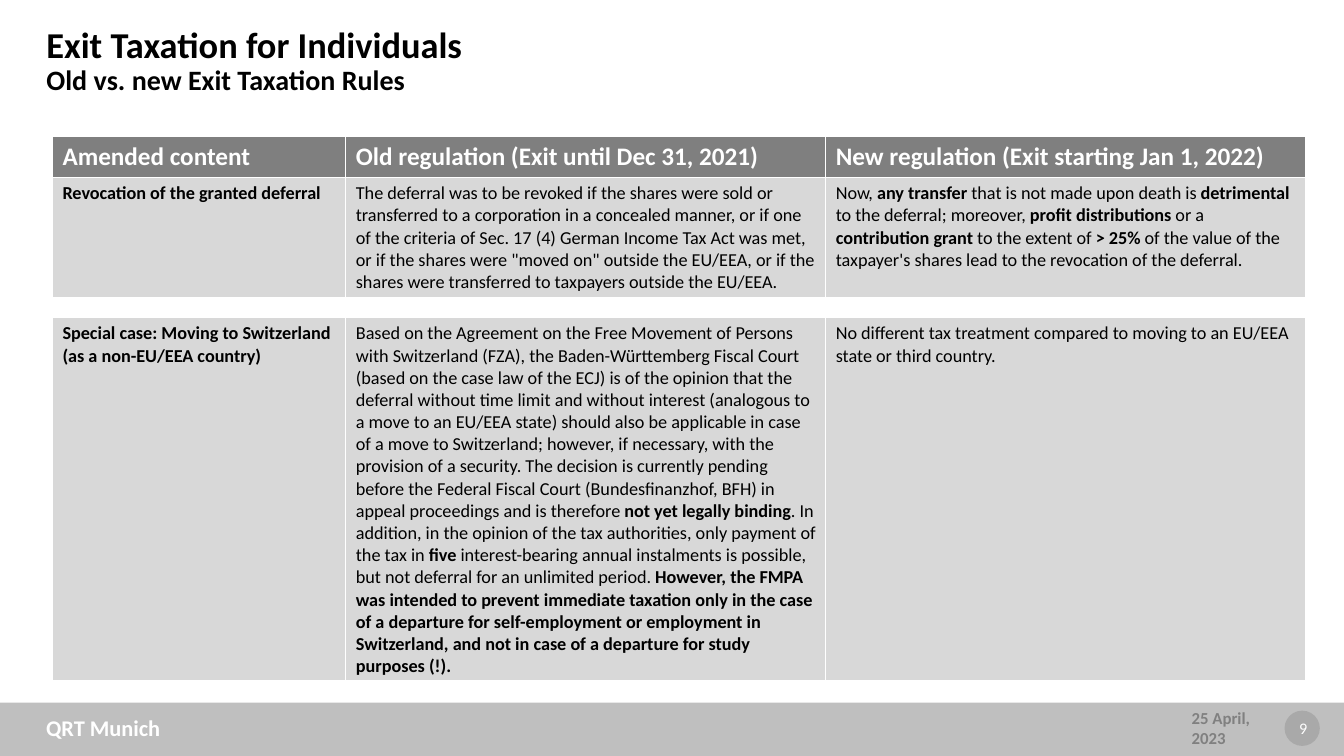
from lxml import etree
from pptx import Presentation
from pptx.dml.color import RGBColor
from pptx.enum.shapes import MSO_SHAPE as Shape
from pptx.enum.text import MSO_ANCHOR as Anchor, MSO_AUTO_SIZE as AutoSize, PP_ALIGN as Align
from pptx.oxml.ns import qn
from pptx.util import Inches, Pt

COLUMN_WIDTHS = (2.91, 4.76, 4.76)
HEADER_HEIGHT = 0.41
GAP_HEIGHT = 0.2
HEADERS = (
    "Amended content",
    "Old regulation (Exit until Dec 31, 2021)",
    "New regulation (Exit starting Jan 1, 2022)",
)
REVOCATION = (
    "**Revocation of the granted deferral**",
    "The deferral was to be revoked if the shares were sold or transferred to a "
    "corporation in a concealed manner, or if one of the criteria of Sec. 17 (4) "
    "German Income Tax Act was met, or if the shares were \"moved on\" outside the "
    "EU/EEA, or if the shares were transferred to taxpayers outside the EU/EEA.",
    "Now, **any transfer **that is not made upon death is **detrimental** to the "
    "deferral; moreover, **profit distributions **or a **contribution grant **to the "
    "extent of **> 25% **of the value of the taxpayer's shares lead to the revocation "
    "of the deferral.",
)
COURT_OPINION = (
    "Based on the Agreement on the Free Movement of Persons with Switzerland (FZA), "
    "the Baden-Württemberg Fiscal Court (based on the case law of the ECJ) is of the "
    "opinion that the deferral without time limit and without interest (analogous to "
    "a move to an EU/EEA state) should also be applicable in case of a move to "
    "Switzerland; however, if necessary, with the provision of a security. The decision "
    "is currently pending before the Federal Fiscal Court (Bundesfinanzhof, BFH) in "
    "appeal proceedings and is therefore **not yet legally binding**."
)
AUTHORITY_OPINION = (
    "In addition, in the opinion of the tax authorities, only payment of the tax in "
    "**five** interest-bearing annual instalments is possible, but not deferral for an "
    "unlimited period. **However, the FMPA was intended to prevent immediate taxation "
    "only in the case of a departure for self-employment or employment in Switzerland, "
    "and not in case of a departure for study purposes (!).**"
)
SWITZERLAND = (
    "**Special case: Moving to Switzerland (as a non-EU/EEA country)**",
    " ".join((COURT_OPINION, AUTHORITY_OPINION)),
    "No different tax treatment compared to moving to an EU/EEA state or third country.",
)
CONTENT_ROWS = ((1, 1.19, REVOCATION), (3, 3.6, SWITZERLAND))


def color(value):
    return RGBColor.from_string(value)


def format_span(span, size, hue, bold):
    span.font.name = "Calibri"
    span.font.size = Pt(size)
    span.font.bold = bold
    span.font.color.rgb = color(hue)


def add_panel(page, kind, place, hue, opacity=None):
    panel = page.shapes.add_shape(kind, *map(Inches, place))
    panel.shadow.inherit = False
    panel.line.fill.background()
    panel.fill.solid()
    panel.fill.fore_color.rgb = color(hue)
    if opacity:
        tint = panel._element.spPr.find(".//" + qn("a:srgbClr"))
        etree.SubElement(tint, qn("a:alpha")).set("val", str(opacity * 1000))


def add_label(page, place, text, size, hue, bold=True, align=Align.LEFT):
    frame = page.shapes.add_textbox(*map(Inches, place)).text_frame
    frame.word_wrap = True
    frame.vertical_anchor = Anchor.MIDDLE
    frame.text = text
    para = frame.paragraphs[0]
    para.alignment = align
    format_span(para.runs[0], size, hue, bold)


def set_title(page):
    title = page.shapes.title
    title.left, title.top, title.width, title.height = map(Inches, (0.36, 0, 12.38, 1.23))
    frame = title.text_frame
    frame.auto_size = AutoSize.NONE
    frame.vertical_anchor = Anchor.MIDDLE
    frame.text = "Exit Taxation for Individuals\vOld vs. new Exit Taxation Rules"
    para = frame.paragraphs[0]
    para.alignment = Align.LEFT
    para.line_spacing = 0.9
    for span, size in zip(para.runs, (26, 20)):
        format_span(span, size, "000000", True)


def fill_cell(cell, hue):
    cell.fill.solid()
    cell.fill.fore_color.rgb = color(hue)


def write_cell(cell, text, size, hue):
    para = cell.text_frame.paragraphs[0]
    for index, part in enumerate(text.split("**")):
        if part:
            span = para.add_run()
            span.text = part
            format_span(span, size, hue, index % 2 == 1)


def empty_cell(cell):
    fill_cell(cell, "FFFFFF")
    cell.margin_top = cell.margin_bottom = 0
    para = cell.text_frame.paragraphs[0]
    etree.SubElement(para._p, qn("a:endParaRPr")).set("sz", "400")


def add_comparison(page):
    heights = [HEADER_HEIGHT, 0, GAP_HEIGHT, 0]
    for row, height, texts in CONTENT_ROWS:
        heights[row] = height
    frame = page.shapes.add_table(
        len(heights), len(COLUMN_WIDTHS), Inches(0.52), Inches(1.35),
        Inches(sum(COLUMN_WIDTHS)), Inches(sum(heights)))
    table = frame.table
    table.horz_banding = False
    for column, width in zip(table.columns, COLUMN_WIDTHS):
        column.width = Inches(width)
    for row, height in zip(table.rows, heights):
        row.height = Inches(height)
    for column, header in enumerate(HEADERS):
        fill_cell(table.cell(0, column), "7F7F7F")
        write_cell(table.cell(0, column), f"**{header}**", 18, "FFFFFF")
        empty_cell(table.cell(2, column))
    for row, height, texts in CONTENT_ROWS:
        for column, text in enumerate(texts):
            fill_cell(table.cell(row, column), "D8D8D8")
            write_cell(table.cell(row, column), text, 13, "000000")


def add_footer(page):
    add_panel(page, Shape.RECTANGLE, (-0.08, 6.97, 13.47, 0.55), "BFBFBF")
    add_panel(page, Shape.OVAL, (12.74, 7.05, 0.35, 0.35), "808080", 34)
    add_label(page, (0.36, 7.02, 4.5, 0.4), "QRT Munich", 16, "FFFFFF")
    add_label(page, (11.72, 7.02, 1.04, 0.4), "25 April, 2023", 12, "808080")
    add_label(page, (12.67, 7.02, 0.51, 0.4), "9", 11.5, "FFFFFF", False, Align.CENTER)


def main():
    deck = Presentation()
    deck.slide_width = Inches(13.33)
    deck.slide_height = Inches(7.5)
    page = deck.slides.add_slide(deck.slide_layouts[5])
    add_footer(page)
    set_title(page)
    add_comparison(page)
    deck.save("out.pptx")


if __name__ == "__main__":
    main()
